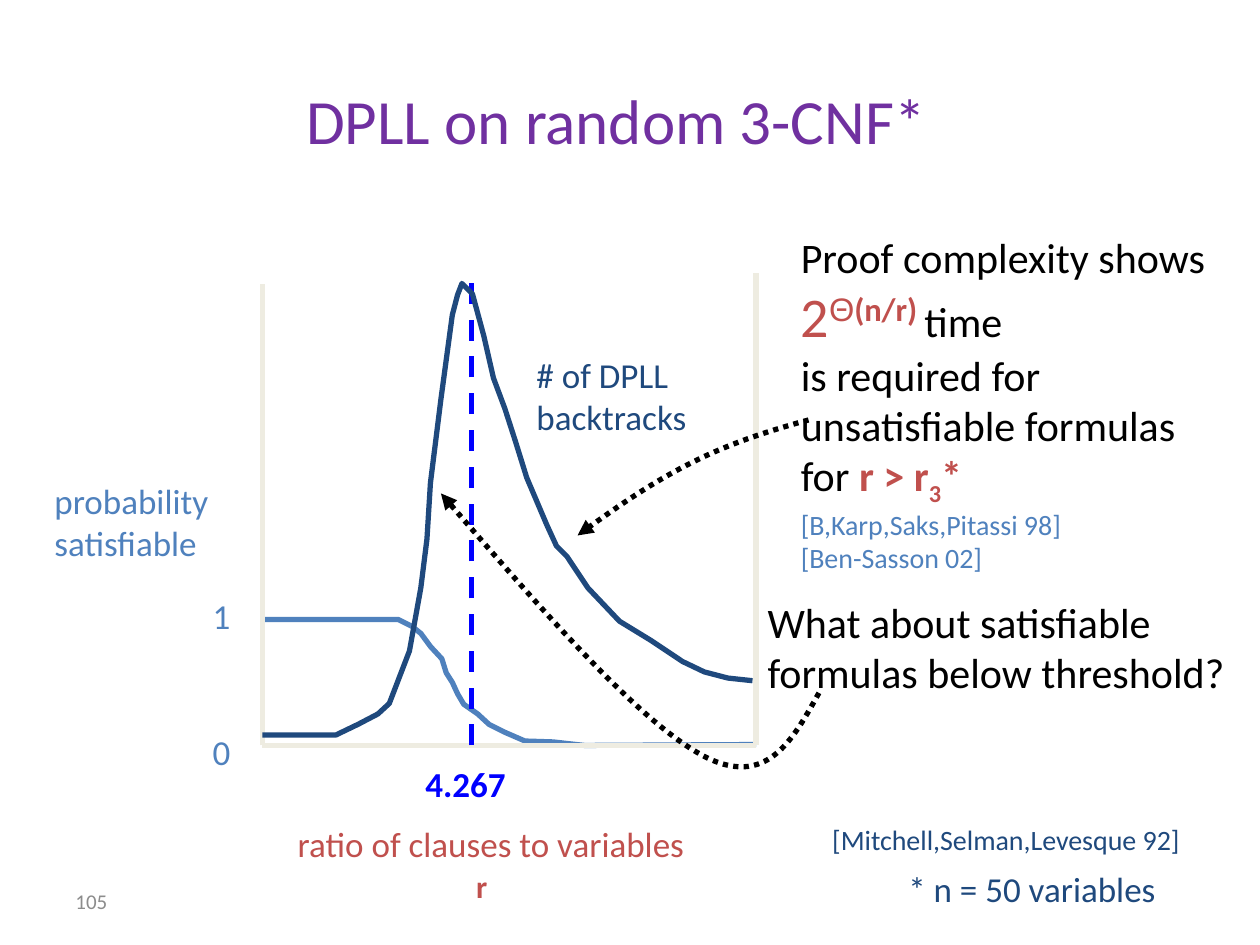
import pptx
import pptx.util
import pptx.dml.color
import pptx.enum.dml
import pptx.enum.shapes
import pptx.enum.text
import pptx.oxml
import pptx.oxml.ns
from dataclasses import dataclass

Pt = pptx.util.Pt
Anchor = pptx.enum.text.MSO_ANCHOR
Dash = pptx.enum.dml.MSO_LINE


@dataclass(frozen=True)
class Theme:
    font: str = "Calibri"
    symbol_font: str = "Arial"
    purple: str = "7030A0"
    light_blue: str = "4F81BD"
    navy: str = "1F497D"
    blue: str = "0000FF"
    red: str = "C0504D"
    axis: str = "EEECE1"
    black: str = "000000"
    grey: str = "8C8C8C"
    title: int = 36
    formula: int = 32
    body: int = 24
    label: int = 20
    small: int = 18
    cite: int = 16
    number: int = 12
    line: int = 3


THEME = Theme()

# Plot frame, in points
LEFT, RIGHT, BASE, TOP = 150, 432, 426, 156
THRESHOLD = 269.5

PROBABILITY = [
    (150.5, 354), (227.5, 354), (235.5, 358), (240.5, 362), (246, 369.5),
    (252.5, 376.5), (255, 384.5), (258.5, 390), (261.5, 396.5), (265, 402.5),
    (273, 408), (279.5, 414), (288.5, 418.5), (300, 423.5), (316, 424),
    (334, 426), (432, 425.5)]
BACKTRACKS = [
    (150, 420), (192, 420), (204.5, 414), (216, 408), (222.5, 402),
    (234, 372), (240.5, 336), (244, 308), (246, 276), (252, 228),
    (258.5, 180), (261.5, 168.5), (264, 162), (270, 168), (276.5, 192),
    (282, 216), (288.5, 233.5), (294.5, 252), (301, 273), (312.5, 300),
    (318, 312), (324, 318), (336, 336), (354, 355), (372, 366),
    (390, 378), (402.5, 384), (416, 387.5), (430, 389)]
# Pointers: a start, then three Bezier points per segment
PROOF_POINTER = [(462, 240), (440, 246), (418, 253), (396, 264),
                 (374, 275), (352, 290), (330, 306)]
QUESTION_POINTER = [(468, 396), (453, 423), (438, 451), (402, 432),
                    (366, 413), (309, 348), (252, 282)]


def rgb(color):
    return pptx.dml.color.RGBColor.from_string(color)


def add_span(para, text, size, color, bold=False, font=THEME.font, baseline=0):
    span = para.add_run()
    span.text = text
    formats = {"size": Pt(size), "bold": bold, "name": font}
    for name, value in formats.items():
        setattr(span.font, name, value)
    span.font.color.rgb = rgb(color)
    if baseline:
        span._r.get_or_add_rPr().set("baseline", str(baseline * 1000))


def add_text(page, place, paragraphs, wrap=False, grow=True,
             anchor=Anchor.MIDDLE, align=None):
    """Each paragraph is a list of argument tuples for add_span."""
    box = page.shapes.add_textbox(*map(Pt, place))
    sizing = pptx.enum.text.MSO_AUTO_SIZE
    formats = {
        "word_wrap": wrap,
        "vertical_anchor": anchor,
        "auto_size": sizing.SHAPE_TO_FIT_TEXT if grow else sizing.NONE,
    }
    for name, value in formats.items():
        setattr(box.text_frame, name, value)
    for index, spans in enumerate(paragraphs):
        para = (box.text_frame.add_paragraph() if index
                else box.text_frame.paragraphs[0])
        para.alignment = align
        for span in spans:
            add_span(para, *span)


def add_label(page, place, lines, size, color, bold=False, **options):
    add_text(page, place, [[(line, size, color, bold)] for line in lines], **options)


def style_line(line, color, dash=None):
    line.color.rgb = rgb(color)
    line.width = Pt(THEME.line)
    if dash:
        line.dash_style = dash


def add_line(page, start, end, color, dash=None):
    line = page.shapes.add_connector(
        pptx.enum.shapes.MSO_CONNECTOR.STRAIGHT, *map(Pt, start + end))
    style_line(line.line, color, dash)
    pptx.oxml.ns.qn("a:effectLst")
    line._element.spPr.append(pptx.oxml.parse_xml(
        "<a:effectLst %s/>" % pptx.oxml.ns.nsdecls("a")))


def add_outline(page, points, color, dash=None):
    corners = [(Pt(x), Pt(y)) for x, y in points]
    builder = page.shapes.build_freeform(*corners[0])
    builder.add_line_segments(corners[1:], close=False)
    shape = builder.convert_to_shape()
    shape.shadow.inherit = False
    shape.fill.background()
    style_line(shape.line, color, dash)
    return shape


def add_pointer(page, points):
    shape = add_outline(page, points, THEME.black, Dash.ROUND_DOT)
    namespace = pptx.oxml.ns.nsdecls("a")
    # Join every three straight segments into one Bezier segment
    steps = shape._element.findall(".//" + pptx.oxml.ns.qn("a:lnTo"))
    for first in range(0, len(steps), 3):
        curve = pptx.oxml.parse_xml("<a:cubicBezTo %s/>" % namespace)
        steps[first].addprevious(curve)
        for step in steps[first:first + 3]:
            curve.append(step[0])
            step.getparent().remove(step)
    shape.line._get_or_add_ln().append(pptx.oxml.parse_xml(
        '<a:tailEnd %s type="triangle"/>' % namespace))


def add_plot(page):
    t = THEME
    add_outline(page, PROBABILITY, t.light_blue)
    for text, top in (("0", 414), ("1", 336)):
        add_label(page, (114.5, top, 25, 31), [text], t.label, t.light_blue)
    add_label(page, (24, 270, 114, 55.5), ["probability", "satisfiable"],
              t.label, t.light_blue, wrap=True)
    # Axes
    add_line(page, (LEFT, BASE), (LEFT, 162), t.axis)
    add_line(page, (LEFT, BASE), (RIGHT, BASE), t.axis)
    add_line(page, (RIGHT, BASE), (RIGHT, TOP), t.axis)
    # Threshold
    add_line(page, (THRESHOLD, BASE), (THRESHOLD, TOP), t.blue, Dash.DASH)
    add_label(page, (236, 432, 69, 31), ["4.267"], t.label, t.blue, True)
    add_label(page, (163, 466.5, 262, 31), ["ratio of clauses to variables"],
              t.label, t.red)
    add_outline(page, BACKTRACKS, t.navy)
    add_label(page, (299.5, 198, 117, 55.5), ["# of DPLL", "backtracks"],
              t.label, t.navy)


def add_remarks(page):
    t = THEME
    add_label(page, (512, 492, 168.5, 31), ["* n = 50 variables"], t.label, t.navy)
    add_text(page, (450.5, 130.5, 253.5, 199.5), [
        [("Proof complexity shows ", t.body, t.black),
         ("2", t.formula, t.red),
         ("Θ", t.formula, t.red, False, t.symbol_font, 30),
         ("(n/r)", t.formula, t.red, True, t.font, 30),
         (" ", t.small, t.black),
         ("time", t.body, t.black)],
        [("is required for", t.body, t.black)],
        [("unsatisfiable formulas for ", t.body, t.black),
         ("r > r", t.body, t.red, True),
         ("3", t.body, t.red, True, t.font, -25),
         ("*", t.body, t.red, True)],
        [("[B,Karp,Saks,Pitassi 98]", t.cite, t.light_blue)],
        [("[Ben-Sasson 02]", t.cite, t.light_blue)],
    ], wrap=True)
    add_label(page, (431.5, 337, 297.5, 65),
              ["What about satisfiable", "formulas below threshold?"],
              t.body, t.black)
    add_pointer(page, PROOF_POINTER)
    add_pointer(page, QUESTION_POINTER)
    add_label(page, (265, 492, 26.5, 41), ["r"], t.small, t.red, True,
              anchor=Anchor.TOP)
    add_label(page, (468.5, 466.5, 235, 26.5), ["[Mitchell,Selman,Levesque 92]"],
              t.cite, t.navy, anchor=Anchor.TOP)


def main():
    deck = pptx.Presentation()
    deck.slide_width, deck.slide_height = Pt(720), Pt(540)
    page = deck.slides.add_slide(deck.slide_layouts[6])
    # Slide number and title
    add_label(page, (36, 500.5, 168, 29), ["105"], THEME.number, THEME.grey,
              wrap=True, grow=False)
    add_label(page, (46, 44.5, 612, 47.5), ["DPLL on random 3-CNF*"],
              THEME.title, THEME.purple, wrap=True, grow=False,
              align=pptx.enum.text.PP_ALIGN.CENTER)
    add_plot(page)
    add_remarks(page)
    deck.save("out.pptx")


if __name__ == "__main__":
    main()
